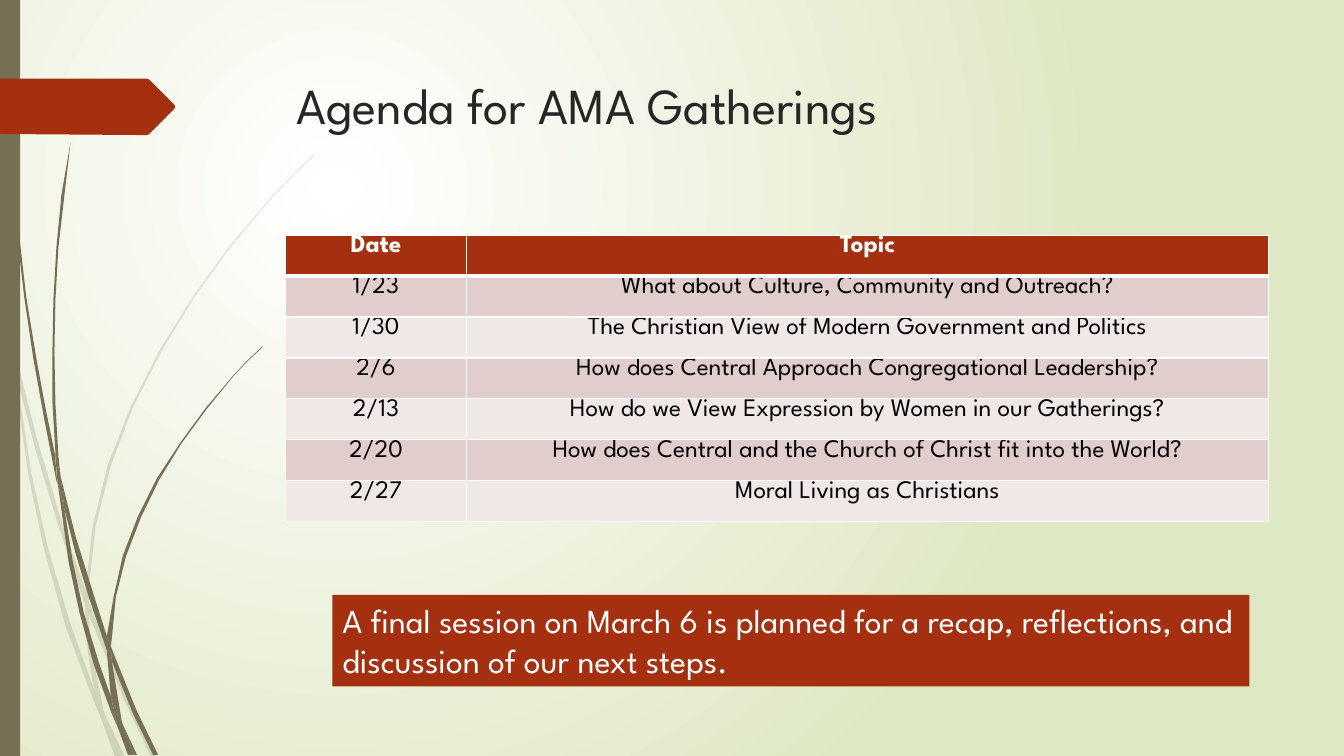
"""Build the agenda slide with its grass decoration, schedule table and closing note."""
import pptx
import pptx.dml.color
import pptx.enum.shapes
import pptx.enum.text
import pptx.oxml
import pptx.oxml.ns
import pptx.util
from pptx.util import Cm

FONT = "League Spartan"
RUST, OLIVE, WHITE = "A53010", "766F54", "FFFFFF"
BAND_COLORS = ("F0E8E7", "E1CDCC")
HUNDREDTH_INCH = Cm(0.0254)

PALE_BLADES = [
    [(11, 350), (9, 322), (0, 282), (0, 299), (10, 344)],
    [(58, 522), (84, 599), (85, 586), (62, 520), (36, 433), (14, 345), (17, 376), (36, 449)],
    [(92, 607), (88, 596), (88, 610), (123, 694), (150, 751), (155, 751), (127, 692)],
    [(119, 751), (124, 751), (105, 711)],
    [(93, 683), (70, 619), (48, 545), (31, 469), (17, 376), (11, 350), (28, 470), (44, 546),
     (65, 621), (92, 693), (101, 714), (99, 707)],
    [(84, 599), (87, 646), (93, 683), (96, 692), (105, 711), (103, 706), (91, 646), (88, 610),
     (88, 608)],
    [(88, 584), (95, 522), (110, 462), (132, 404), (160, 349), (192, 296), (229, 245),
     (268, 198), (290, 175), (312, 154), (312, 153), (289, 175), (268, 197), (228, 244),
     (191, 295), (158, 348), (130, 403), (107, 461), (92, 522), (85, 584), (85, 586), (88, 596)],
    [(101, 714), (114, 751), (119, 751)],
    [(88, 608), (88, 610), (88, 596), (85, 586), (84, 599)],
    [(96, 692), (93, 683), (99, 707), (101, 714), (119, 751), (105, 711)],
]
DARK_BLADES = [
    [(7, 110), (11, 172), (17, 233), (24, 294), (33, 355), (44, 416), (56, 477), (57, 481),
     (55, 457), (55, 453), (45, 404), (36, 355), (26, 294), (19, 232), (12, 171), (8, 109),
     (5, 48), (4, 0), (3, 0), (4, 48)],
    [(88, 592), (106, 645), (106, 633), (106, 631), (93, 590), (75, 532), (60, 472), (64, 505),
     (75, 549)],
    [(113, 649), (110, 641), (111, 656), (132, 708), (152, 749), (157, 749), (136, 706)],
    [(110, 691), (98, 657), (83, 607), (72, 556), (64, 505), (57, 477), (68, 557), (79, 608),
     (93, 659), (111, 708), (117, 722), (116, 717)],
    [(60, 472), (58, 453), (55, 401), (54, 349), (55, 297), (58, 245), (64, 193), (70, 141),
     (61, 193), (56, 245), (53, 297), (52, 349), (52, 399), (55, 449)],
    [(133, 749), (136, 749), (122, 719)],
    [(57, 477), (64, 505), (60, 472), (55, 449), (55, 453)],
    [(111, 633), (115, 592), (125, 552), (140, 513), (158, 476), (180, 440), (205, 406),
     (231, 374), (245, 359), (261, 344), (260, 344), (245, 358), (231, 373), (204, 405),
     (179, 439), (156, 474), (137, 512), (122, 551), (113, 591), (106, 631), (110, 641)],
    [(117, 722), (127, 749), (131, 749)],
    [(106, 645), (110, 691), (116, 706), (122, 719), (121, 716), (111, 656), (109, 651)],
    [(106, 645), (109, 651), (111, 656), (110, 641), (106, 631), (106, 633)],
    [(116, 706), (110, 691), (116, 717), (117, 722), (130, 749), (133, 749), (122, 719)],
]
ARROW_TAB = [(0, 78), (146, 78), (148, 79), (173, 104), (174, 106), (173, 108), (148, 133),
             (146, 134), (136, 134), (0, 133)]

AGENDA = [
    ("Date", "Topic"),
    ("1/23", "What about Culture, Community and Outreach?"),
    ("1/30", "The Christian View of Modern Government and Politics"),
    ("2/6", "How does Central Approach Congregational Leadership?"),
    ("2/13", "How do we View Expression by Women in our Gatherings?"),
    ("2/20", "How does Central and the Church of Christ fit into the World?"),
    ("2/27", "Moral Living as Christians"),
]


def color(value):
    return pptx.dml.color.RGBColor.from_string(value)


def add_xml(parent, tag, attributes="", children=""):
    namespace = pptx.oxml.ns.nsdecls("a")
    parent.append(pptx.oxml.parse_xml(f"<a:{tag} {namespace} {attributes}>{children}</a:{tag}>"))


def paint(shape, fill):
    shape.shadow.inherit = False
    shape.fill.solid()
    shape.fill.fore_color.rgb = color(fill)
    shape.line.fill.background()


def format_text(paragraph, size, text_color, alignment, bold=False):
    paragraph.alignment = alignment
    paragraph.font.name = FONT
    paragraph.font.size = pptx.util.Pt(size)
    paragraph.font.bold = bold
    paragraph.font.color.rgb = color(text_color)


def set_background(slide):
    fill = slide.background.fill
    fill.gradient()
    for stop, value in zip(fill.gradient_stops, (WHITE, "DFE8C4")):
        stop.color.rgb = color(value)
    gradient = slide.element.find(".//" + pptx.oxml.ns.qn("a:gradFill"))
    gradient.remove(gradient.find(pptx.oxml.ns.qn("a:lin")))
    add_xml(gradient, "path", 'path="circle"',
            '<a:fillToRect l="50000" t="50000" r="100000" b="100000"/>')


def add_outline(slide, points, fill, opacity=100):
    builder = slide.shapes.build_freeform(*points[0], scale=HUNDREDTH_INCH)
    builder.add_line_segments(points[1:], close=True)
    shape = builder.convert_to_shape()
    paint(shape, fill)
    if opacity < 100:
        solid = shape.element.spPr.find(pptx.oxml.ns.qn("a:solidFill"))
        add_xml(solid[0], "alpha", f'val="{opacity * 1000}"')


def add_rectangle(slide, left, top, width, height, fill):
    rectangle = pptx.enum.shapes.MSO_SHAPE.RECTANGLE
    shape = slide.shapes.add_shape(rectangle, Cm(left), Cm(top), Cm(width), Cm(height))
    paint(shape, fill)
    return shape


def set_title(slide, text):
    title = slide.shapes.title
    title.left, title.top, title.width, title.height = Cm(7.21), Cm(1.73), Cm(24.77), Cm(3.56)
    frame = title.text_frame
    frame.text = text
    frame.vertical_anchor = pptx.enum.text.MSO_ANCHOR.TOP
    frame.auto_size = pptx.enum.text.MSO_AUTO_SIZE.NONE
    format_text(frame.paragraphs[0], 36, "262626", pptx.enum.text.PP_ALIGN.LEFT)


def set_borders(cell, top, bottom):
    properties = cell._tc.get_or_add_tcPr()
    for side, points in (("L", 1), ("R", 1), ("T", top), ("B", bottom)):
        add_xml(properties, f"ln{side}", f'w="{points * 12700}"',
                f'<a:solidFill><a:srgbClr val="{WHITE}"/></a:solidFill>')


def add_agenda(slide):
    row_height = 1.03
    table = slide.shapes.add_table(len(AGENDA), 2, Cm(7.2), Cm(5.93), Cm(24.77),
                                   Cm(row_height * len(AGENDA))).table
    for column, width in zip(table.columns, (4.55, 20.22)):
        column.width = Cm(width)
    for row, texts in enumerate(AGENDA):
        header = row == 0
        table.rows[row].height = Cm(row_height)
        for column, text in enumerate(texts):
            cell = table.cell(row, column)
            cell.text = text
            cell.margin_top = cell.margin_bottom = 0
            set_borders(cell, 3 if row == 1 else 1, 3 if header else 1)
            cell.fill.solid()
            cell.fill.fore_color.rgb = color(RUST if header else BAND_COLORS[row % 2])
            format_text(cell.text_frame.paragraphs[0], 18, WHITE if header else "000000",
                        pptx.enum.text.PP_ALIGN.CENTER, header)


def add_note(slide, text):
    frame = add_rectangle(slide, 8.38, 14.99, 23.11, 2.31, RUST).text_frame
    frame.text = text
    frame.word_wrap = True
    frame.vertical_anchor = pptx.enum.text.MSO_ANCHOR.TOP
    format_text(frame.paragraphs[0], 24, WHITE, pptx.enum.text.PP_ALIGN.LEFT)


def main():
    presentation = pptx.Presentation()
    presentation.slide_width, presentation.slide_height = Cm(33.87), Cm(19.05)
    slide = presentation.slides.add_slide(presentation.slide_layouts[5])
    set_background(slide)
    for blade in PALE_BLADES:
        add_outline(slide, blade, OLIVE, 20)
    for blade in DARK_BLADES:
        add_outline(slide, blade, OLIVE)
    add_rectangle(slide, 0, 0, 0.51, 19.05, OLIVE)
    add_outline(slide, ARROW_TAB, RUST)
    set_title(slide, "Agenda for AMA Gatherings")
    add_agenda(slide)
    add_note(slide, "A final session on March 6 is planned for a recap, reflections, "
                    "and discussion of our next steps.")
    presentation.save("out.pptx")


if __name__ == "__main__":
    main()
